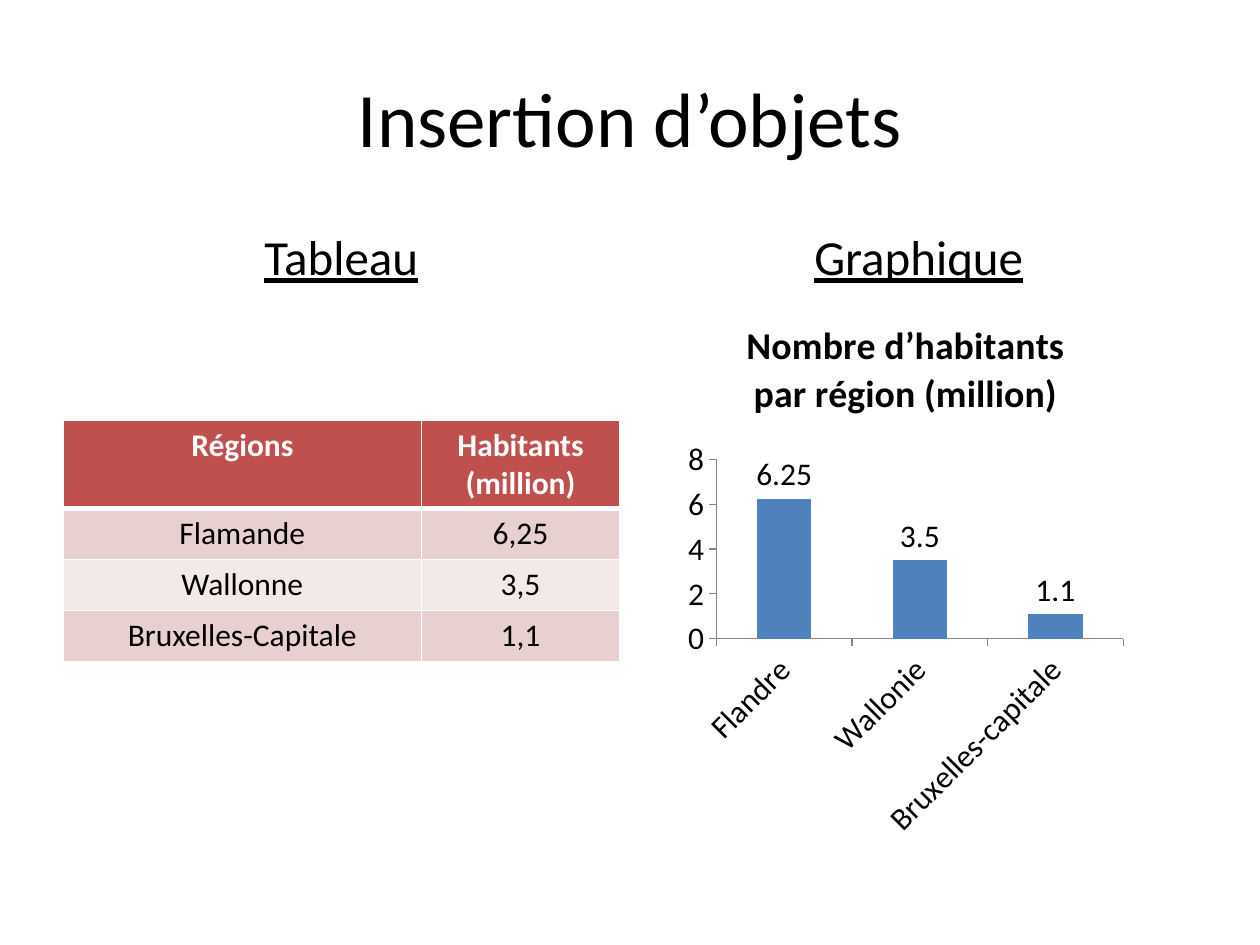
import pptx
import pptx.chart.data
import pptx.dml.color
import pptx.enum.chart
import pptx.enum.text
import pptx.oxml
import pptx.oxml.ns
import pptx.util

Pt = pptx.util.Pt
CENTER = pptx.enum.text.PP_ALIGN.CENTER
MIDDLE = pptx.enum.text.MSO_ANCHOR.MIDDLE
TOP = pptx.enum.text.MSO_ANCHOR.TOP


def rgb(value):
    return pptx.dml.color.RGBColor.from_string(value)


def add_border(cell, side, width):
    """Draw a white border on one side ("L", "R", "T" or "B") of a cell."""
    xml = (f'<a:ln{side} {pptx.oxml.ns.nsdecls("a")} w="{Pt(width)}"><a:solidFill>'
           f'<a:srgbClr val="FFFFFF"/></a:solidFill></a:ln{side}>')
    cell._tc.get_or_add_tcPr().append(pptx.oxml.parse_xml(xml))


class Deck:
    """Holds the style and the current slide; lengths are in points."""
    font = "Calibri"
    text = "000000"
    bar = "4F81BD"
    axis = "868686"
    header = "C0504D"
    bands = ("E8D0D0", "F4E9E9")

    def __init__(self, width, height):
        self.prs = pptx.Presentation()
        self.prs.slide_width, self.prs.slide_height = Pt(width), Pt(height)
        self.s = self.prs.slides.add_slide(self.prs.slide_layouts[6])

    def style(self, font, size, color=None, bold=False, underline=False):
        font.name, font.size = self.font, Pt(size)
        font.bold, font.underline = bold, underline
        font.color.rgb = rgb(color or self.text)

    def add_text(self, tf, text, size, **look):
        p = tf.paragraphs[0]
        p.alignment = CENTER
        r = p.add_run()
        r.text = text
        self.style(r.font, size, **look)

    def text_box(self, box, text, size, anchor=TOP, underline=False):
        tf = self.s.shapes.add_textbox(*map(Pt, box)).text_frame
        tf.word_wrap = True
        tf.vertical_anchor = anchor
        self.add_text(tf, text, size, underline=underline)

    def table(self, left, top, widths, row_height, rows):
        sp = self.s.shapes.add_table(len(rows), len(widths), Pt(left), Pt(top),
                                     Pt(sum(widths)), Pt(row_height * len(rows)))
        table = sp.table
        for column, width in zip(table.columns, widths):
            column.width = Pt(width)
        for i, row in enumerate(rows):
            is_header = i == 0
            for j, text in enumerate(row):
                cell = table.cell(i, j)
                for side in "LRTB":
                    below_header = (is_header and side == "B") or (i == 1 and side == "T")
                    add_border(cell, side, 3 if below_header else 1)
                cell.fill.solid()
                cell.fill.fore_color.rgb = rgb(self.header if is_header else self.bands[(i - 1) % 2])
                self.add_text(cell.text_frame, text, 18, bold=is_header,
                              color="FFFFFF" if is_header else self.text)

    def column_chart(self, box, title, values):
        data = pptx.chart.data.CategoryChartData()
        data.categories = list(values)
        data.add_series("Series 1", list(values.values()))
        kind = pptx.enum.chart.XL_CHART_TYPE.COLUMN_CLUSTERED
        chart = self.s.shapes.add_chart(kind, *map(Pt, box), data).chart
        self.style(chart.font, 18)
        chart.has_legend = False
        chart.has_title = True
        self.add_text(chart.chart_title.text_frame, title, 21.6, bold=True)
        chart.chart_title.include_in_layout = False

        plot = chart.plots[0]
        plot.gap_width = 150
        plot.vary_by_categories = False
        plot.has_data_labels = True
        plot.data_labels.show_value = True
        fill = plot.series[0].format.fill
        fill.solid()
        fill.fore_color.rgb = rgb(self.bar)

        for axis in (chart.category_axis, chart.value_axis):
            axis.has_major_gridlines = False
            axis.major_tick_mark = pptx.enum.chart.XL_TICK_MARK.OUTSIDE
            axis.format.line.color.rgb = rgb(self.axis)
        chart.value_axis.minimum_scale = 0
        chart.value_axis.maximum_scale = 8
        chart.value_axis.major_unit = 2


def main():
    deck = Deck(720, 540)
    margin, column_width, gap = 36, 318, 12
    deck.text_box((margin, 21.6, 648, 90), "Insertion d’objets", 44, anchor=MIDDLE)
    for i, heading in enumerate(("Tableau", "Graphique")):
        left = margin + i * (column_width + gap)
        deck.text_box((left, 126, column_width, 356.4), heading, 28, underline=True)
    deck.table(margin, 240, (205, 113), 29.2, [
        ("Régions", "Habitants (million)"),
        ("Flamande", "6,25"),
        ("Wallonne", "3,5"),
        ("Bruxelles-Capitale", "1,1"),
    ])
    deck.column_chart((388, 168, 259, 317.5), "Nombre d’habitants par région (million)",
                      {"Flandre": 6.25, "Wallonie": 3.5, "Bruxelles-capitale": 1.1})
    deck.prs.save("out.pptx")


if __name__ == "__main__":
    main()
